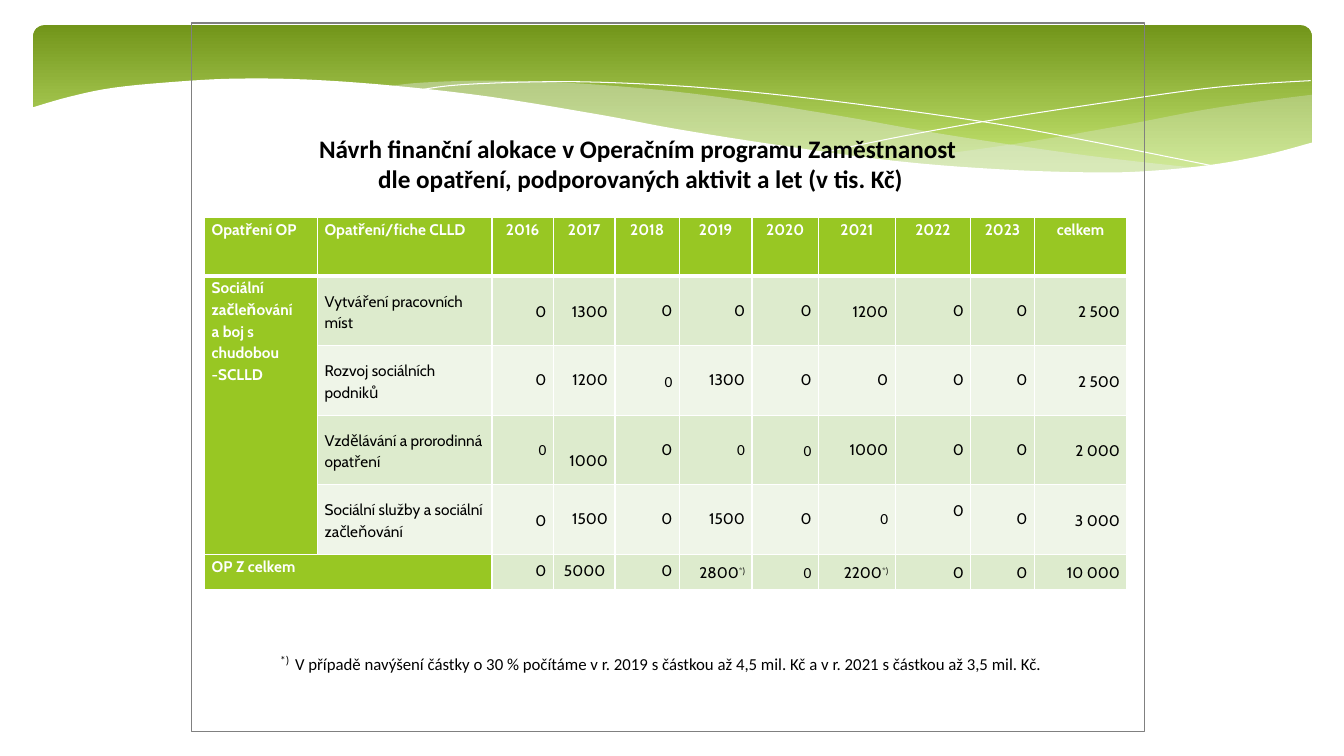
from lxml import etree
from pptx import Presentation
from pptx.dml.color import RGBColor
from pptx.enum.shapes import MSO_SHAPE
from pptx.enum.text import MSO_ANCHOR, PP_ALIGN
from pptx.oxml.ns import qn
from pptx.util import Inches, Pt

RECT, ROUND = MSO_SHAPE.RECTANGLE, MSO_SHAPE.ROUNDED_RECTANGLE
TOP, MIDDLE = MSO_ANCHOR.TOP, MSO_ANCHOR.MIDDLE
LEFT, CENTER, RIGHT = PP_ALIGN.LEFT, PP_ALIGN.CENTER, PP_ALIGN.RIGHT

# Content
TITLE = ("Návrh finanční alokace v Operačním programu Zaměstnanost \v"
         "dle opatření, podporovaných aktivit a let (v tis. Kč)")
MARK = "*)"
NOTE = ("V případě navýšení částky o 30 % počítáme v r. 2019 s částkou až "
        "4,5 mil. Kč a v r. 2021 s částkou až 3,5 mil. Kč.")
HEADER = ["Opatření OP", "Opatření/fiche CLLD", "2016", "2017", "2018", "2019",
          "2020", "2021", "2022", "2023", "celkem"]
GROUP = "Sociální začleňování \va boj s chudobou -SCLLD"
TOTAL = "OP Z celkem"
# label, values, columns with wide line spacing, columns in the second font, spaced
ROWS = [
    ("Vytváření pracovních míst",
     ["0", "1300", "0", "0", "0", "1200", "0", "0", "2 500"], {2, 3, 7, 10}, set(), False),
    ("Rozvoj sociálních podniků",
     ["0", "1200", "0", "1300", "0", "0", "0", "0", "2 500"], {4, 10}, {4}, False),
    ("Vzdělávání a prorodinná opatření",
     ["0", "1000", "0", "0", "0", "1000", "0", "0", "2 000"], {6, 10}, {2, 5, 6}, True),
    ("Sociální služby a sociální začleňování",
     ["0", "1500", "0", "1500", "0", "0", "0", "0", "3 000"], {2, 10}, {7}, False),
    ("", ["0", " 5000", "0", "2800*)", "0", "2200*)", "0", "0", "10 000"],
     {5, 6, 7, 8, 9, 10}, {6}, True),
]
COLS = [1.12, 1.73, 0.61, 0.61, 0.64, 0.72, 0.66, 0.76, 0.75, 0.63, 0.92]
HEIGHTS = [0.58, 0.69, 0.69, 0.69, 0.69, 0.35]

COLORS = {"dark": "72951A", "light": "C5E672", "mist": "E7ECED", "green": "98C723",
          "band": "DDEBCD", "pale": "EFF5E8", "white": "FFFFFF", "black": "000000",
          "frame": "808080"}
BODY, PLAIN = "Cabin", "Calibri"

# Wave outlines: smooth edges in inches, joined by straight lines
RIGHT_MIST = [[(13.01, 0.94), (12.46, 1.01), (11.88, 1.1), (11.1, 1.25), (10.05, 1.43),
               (8.82, 1.6)],
              [(8.82, 1.6), (9.58, 1.67), (10.25, 1.71), (10.85, 1.72), (11.51, 1.7),
               (12.07, 1.63), (12.57, 1.54), (13.01, 1.42)]]
MIDDLE_MIST = [[(11.9, 1.67), (10.76, 1.54), (9.41, 1.34), (8.39, 1.16), (7.4, 1),
                (6.52, 0.89), (5.6, 0.82), (4.82, 0.8), (4.18, 0.82), (3.82, 0.86)],
               [(3.82, 0.86), (4.83, 0.97), (5.99, 1.16), (7.55, 1.43), (8.46, 1.56),
                (9.45, 1.66), (10.3, 1.72), (11.04, 1.73), (11.9, 1.67)]]
FALLING = [[(4.12, 0.9), (4.58, 0.84), (5.55, 0.81), (6.52, 0.84), (7.42, 0.91),
            (8.48, 1.03), (9.7, 1.2), (10.6, 1.36), (12.1, 1.66)]]
RISING = [[(8.18, 1.51), (8.96, 1.35), (9.97, 1.17), (11.15, 0.99), (11.94, 0.88),
           (12.5, 0.83), (13, 0.8)]]
WHITE_WAVE = [[(13.03, 1.41), (12.54, 1.54), (11.98, 1.64), (11.34, 1.7), (10.78, 1.71),
               (9.92, 1.68), (8.91, 1.6), (7.72, 1.44), (6.71, 1.28), (5.96, 1.14),
               (4.86, 0.96), (3.9, 0.85), (3.06, 0.79), (2.35, 0.78), (1.76, 0.81),
               (1.13, 0.87), (0.69, 0.96), (0.31, 1.07)],
              [(0.31, 2.24), (13.03, 2.24)]]


def rgb(name):
    return RGBColor.from_string(COLORS[name])


def smooth(knots, steps=5):
    """Catmull-Rom curve through the knots."""
    pts = [knots[0], *knots, knots[-1]]
    out = [knots[0]]
    for a, b, c, d in zip(pts, pts[1:], pts[2:], pts[3:]):
        for i in range(1, steps + 1):
            t = i / steps
            out.append(tuple(
                q + t / 2 * (s - p + t * (2 * p - 5 * q + 4 * s - e
                                          + t * (3 * (q - s) + e - p)))
                for p, q, s, e in zip(a, b, c, d)))
    return out


def wave(edges, fill=None, alpha=None):
    pts = [(Inches(x), Inches(y)) for edge in edges for x, y in smooth(edge)]
    fb = slide.shapes.build_freeform(*pts[0])
    fb.add_line_segments(pts[1:], close=fill is not None)
    sp = fb.convert_to_shape()
    sp.shadow.inherit = False
    if fill is None:
        sp.fill.background()
        sp.line.color.rgb = rgb("white")
        sp.line.width = Pt(0)
        return
    sp.fill.solid()
    sp.fill.fore_color.rgb = rgb(fill)
    sp.line.fill.background()
    if alpha:
        color = sp._element.spPr.find(qn("a:solidFill"))[0]
        etree.SubElement(color, qn("a:alpha")).set("val", str(alpha * 1000))


def box(kind, *place):
    sp = slide.shapes.add_shape(kind, *map(Inches, place))
    sp.shadow.inherit = False
    return sp


def style(r, size, font=PLAIN, color="black", bold=False, raised=False):
    f = r.font
    f.size, f.name, f.bold = Pt(size), font, bold
    f.color.rgb = rgb(color)
    if raised:
        r._r.get_or_add_rPr().set("baseline", "30000")


def fill_cell(cell, text, fill, color="black", bold=False, font=BODY, align=LEFT,
              anchor=TOP, spacing=1.15, before=0):
    cell.fill.solid()
    cell.fill.fore_color.rgb = rgb(fill)
    cell.margin_left = cell.margin_right = Inches(0.07)
    cell.margin_top = cell.margin_bottom = 0
    cell.vertical_anchor = anchor
    p = cell.text_frame.paragraphs[0]
    p.text = text.removesuffix(MARK)
    if text.endswith(MARK):
        p.add_run().text = MARK
    p.alignment, p.line_spacing = align, spacing
    p.space_before, p.space_after = Pt(before), Pt(1 if before else 0)
    for r in p.runs:
        style(r, 11, font, color, bold, r.text == MARK)


def border(cell, row):
    widths = {"lnL": 1, "lnR": 1, "lnT": 3 if row == 1 else 1, "lnB": 1 if row else 3}
    for i, (tag, width) in enumerate(widths.items()):
        ln = etree.Element(qn("a:" + tag), w=str(Pt(width)))
        solid = etree.SubElement(ln, qn("a:solidFill"))
        etree.SubElement(solid, qn("a:srgbClr")).set("val", COLORS["white"])
        cell._tc.get_or_add_tcPr().insert(i, ln)


prs = Presentation()
prs.slide_width, prs.slide_height = Inches(13.33), Inches(7.5)
slide = prs.slides.add_slide(prs.slide_layouts[5])

# Green banner with waves
banner = box(ROUND, 0.33, 0.25, 12.68, 1.56)
banner.adjustments[0] = 0.07
banner.line.fill.background()
banner.fill.gradient()
banner.fill.gradient_angle = 270
for stop, name, pos in zip(banner.fill.gradient_stops, ("dark", "light"), (0, 0.9)):
    stop.color.rgb, stop.position = rgb(name), pos
wave(RIGHT_MIST, "mist", 29)
wave(MIDDLE_MIST, "mist", 40)
wave(FALLING)
wave(RISING)
wave(WHITE_WAVE, "white")

# Frame
frame = box(RECT, 1.9, 0.23, 9.45, 7.03)
frame.fill.background()
frame.line.color.rgb = rgb("frame")
frame.line.width = Pt(1)

# Table
table = slide.shapes.add_table(len(HEIGHTS), len(COLS), Inches(2.03), Inches(2.16),
                               Inches(sum(COLS)), Inches(sum(HEIGHTS))).table
table.horz_banding = False
for col, width in zip(table.columns, COLS):
    col.width = Inches(width)
for row, height in zip(table.rows, HEIGHTS):
    row.height = Inches(height)
for c, text in enumerate(HEADER):
    fill_cell(table.cell(0, c), text, "green", "white", True,
              align=CENTER if c > 1 else LEFT, before=2)
for n, (label, values, wide, plain, spaced) in enumerate(ROWS, 1):
    fill, before = "band" if n % 2 else "pale", 3 if spaced else 0
    fill_cell(table.cell(n, 1), label, fill, anchor=MIDDLE, before=before)
    for c, text in enumerate(values, 2):
        fill_cell(table.cell(n, c), text, fill, font=PLAIN if c in plain else BODY,
                  align=LEFT if text.startswith(" ") else RIGHT, anchor=MIDDLE,
                  spacing=1.15 if c in wide else 0.9, before=before)
table.cell(3, 3).margin_top = Inches(0.22)
table.cell(4, 8).margin_bottom = Inches(0.17)
table.cell(1, 0).merge(table.cell(4, 0))
table.cell(5, 0).merge(table.cell(5, 1))
fill_cell(table.cell(1, 0), GROUP, "green", "white", True, before=2)
fill_cell(table.cell(5, 0), TOTAL, "green", "white", True, before=3)
for i, cell in enumerate(table.iter_cells()):
    border(cell, i // len(COLS))

# Title, brought in front of the banner
title = slide.shapes.title
title.left, title.top, title.width, title.height = map(Inches, (2.18, 1.27, 8.35, 0.75))
tf = title.text_frame
tf.text = TITLE
tf.word_wrap, tf.vertical_anchor = True, TOP
p = tf.paragraphs[0]
p.alignment = CENTER
for r in p.runs:
    style(r, 18, bold=True)
slide.shapes._spTree.append(title._element)

# Footnote
tf = slide.shapes.add_textbox(*map(Inches, (2.68, 6.35, 8.68, 0.4))).text_frame
tf.word_wrap = True
for text, size in ((MARK, 14), (" ", 18), (NOTE, 12)):
    r = tf.paragraphs[0].add_run()
    r.text = text
    style(r, size, raised=text == MARK)

prs.save("out.pptx")
